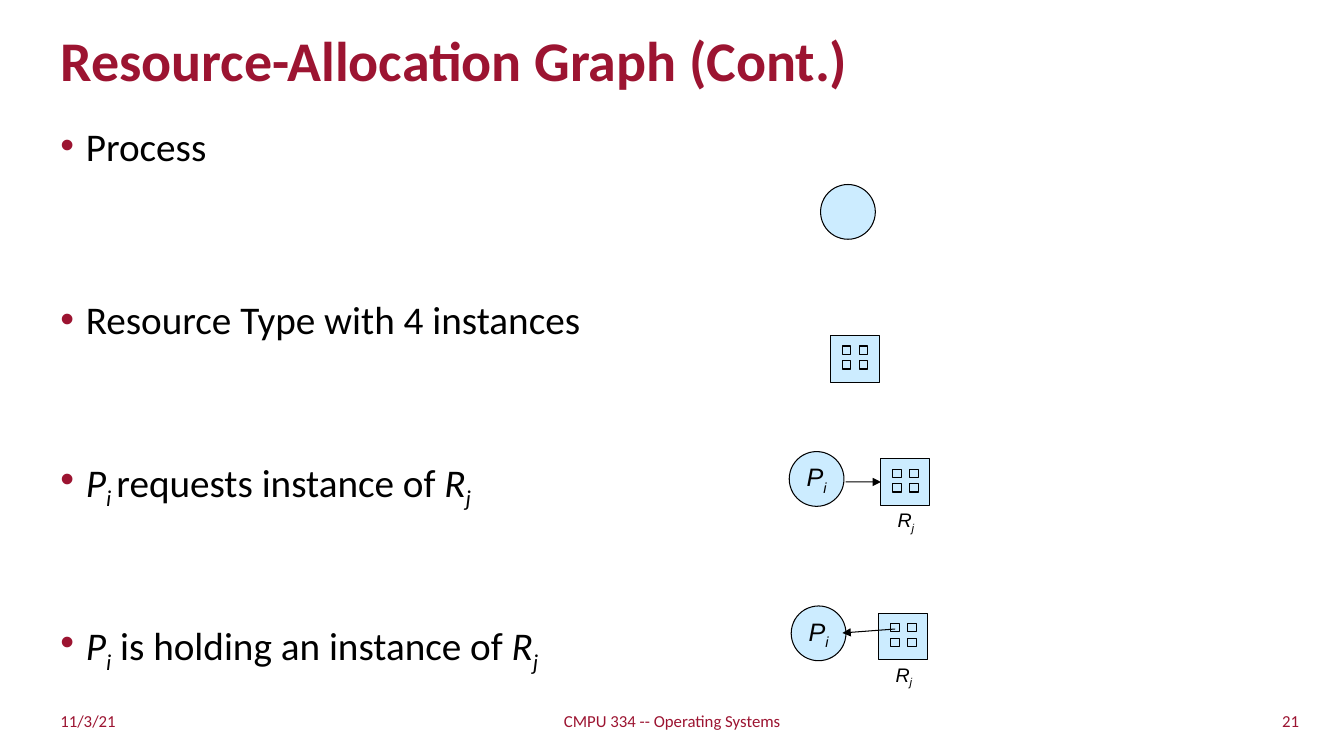
from dataclasses import dataclass

from lxml import etree
from pptx import Presentation
from pptx.dml.color import RGBColor
from pptx.enum import shapes, text
from pptx.oxml import ns
from pptx.util import Cm, Pt


@dataclass(frozen=True)
class Theme:
    accent: RGBColor = RGBColor(0x9C, 0x14, 0x31)
    ink: RGBColor = RGBColor(0, 0, 0)
    node: RGBColor = RGBColor(0xCC, 0xEC, 0xFF)
    heading_font: str = "Calibri"
    diagram_font: str = "Arial"
    title: Pt = Pt(40)
    body: Pt = Pt(28)
    process: Pt = Pt(18)
    resource: Pt = Pt(14)
    footer: Pt = Pt(12)
    outline: Pt = Pt(0.75)


THEME = Theme()
PLAIN, ITALIC, SUBSCRIPT = "plain", "italic", "subscript"
PROCESS_NAME = [("P", ITALIC), ("i", SUBSCRIPT)]
RESOURCE_NAME = [("R", ITALIC), ("j", SUBSCRIPT)]
BULLETS = [
    (0, [("Process", PLAIN)]),
    (97, [("Resource Type with 4 instances", PLAIN)]),
    (86, [("P", ITALIC), ("i ", SUBSCRIPT),
          ("requests instance of ", PLAIN), *RESOURCE_NAME]),
    (86, [*PROCESS_NAME, (" is holding an instance of ", PLAIN), *RESOURCE_NAME]),
]
PROCESS_SIZE = 1.38
RESOURCE_WIDTH, RESOURCE_HEIGHT = 1.23, 1.17
INSTANCE_SIZE = 0.21


def add_runs(paragraph, runs, size, font, color, bold=False):
    for words, style in runs:
        run = paragraph.add_run()
        run.text = words
        run.font.size = size
        run.font.name = font
        run.font.color.rgb = color
        run.font.bold = bold
        run.font.italic = style != PLAIN
        if style == SUBSCRIPT:
            run.font._element.set("baseline", "-25000")


def place(shape, left, top, width, height):
    shape.left, shape.top = Cm(left), Cm(top)
    shape.width, shape.height = Cm(width), Cm(height)


def fill_title(title, words):
    place(title, 1.27, 0.64, 29.08, 1.9)
    frame = title.text_frame
    frame.auto_size = text.MSO_AUTO_SIZE.NONE
    frame.vertical_anchor = text.MSO_ANCHOR.MIDDLE
    heading = frame.paragraphs[0]
    heading.alignment = text.PP_ALIGN.LEFT
    heading.line_spacing = 0.9
    add_runs(heading, [(words, PLAIN)], THEME.title, THEME.heading_font,
             THEME.accent, bold=True)


def add_bullet(paragraph):
    properties = paragraph._p.get_or_add_pPr()
    properties.set("marL", str(Cm(0.64)))
    properties.set("indent", str(Cm(-0.64)))
    color = etree.SubElement(properties, ns.qn("a:buClr"))
    etree.SubElement(color, ns.qn("a:srgbClr"), val=str(THEME.accent))
    etree.SubElement(properties, ns.qn("a:buFont"), typeface="Arial")
    etree.SubElement(properties, ns.qn("a:buChar"), char="•")


def fill_body(body, bullets):
    place(body, 1.27, 3.18, 31.32, 13.84)
    frame = body.text_frame
    frame.auto_size = text.MSO_AUTO_SIZE.NONE
    frame.vertical_anchor = text.MSO_ANCHOR.TOP
    for index, (space, runs) in enumerate(bullets):
        item = frame.add_paragraph() if index else frame.paragraphs[0]
        add_bullet(item)
        item.line_spacing = 0.8
        item.space_before = Pt(space)
        add_runs(item, runs, THEME.body, THEME.heading_font, THEME.ink)


def add_node(parent, preset, left, top, width, height):
    node = parent.add_shape(preset, Cm(left), Cm(top), Cm(width), Cm(height))
    node.shadow.inherit = False
    node.fill.solid()
    node.fill.fore_color.rgb = THEME.node
    node.line.color.rgb = THEME.ink
    node.line.width = THEME.outline
    return node


def add_name(frame, runs, size):
    frame.word_wrap = False
    frame.vertical_anchor = text.MSO_ANCHOR.MIDDLE
    name = frame.paragraphs[0]
    name.alignment = text.PP_ALIGN.CENTER
    add_runs(name, runs, size, THEME.diagram_font, THEME.ink)


def add_process(slide, left, top, name=()):
    process = add_node(slide.shapes, shapes.MSO_SHAPE.OVAL, left, top,
                       PROCESS_SIZE, PROCESS_SIZE)
    if name:
        add_name(process.text_frame, name, THEME.process)


def add_resource(slide, left, top, name=()):
    square = shapes.MSO_SHAPE.RECTANGLE
    group = slide.shapes.add_group_shape().shapes
    resource = add_node(group, square, left, top, RESOURCE_WIDTH, RESOURCE_HEIGHT)
    for row in range(2):
        for column in range(2):
            add_node(group, square, left + 0.3 + 0.43 * column,
                     top + 0.26 + 0.37 * row, INSTANCE_SIZE, INSTANCE_SIZE)
    if name:
        label = slide.shapes.add_textbox(Cm(left + 0.16), Cm(top + 1.15),
                                         Cm(0.94), Cm(0.86))
        label.text_frame.auto_size = text.MSO_AUTO_SIZE.SHAPE_TO_FIT_TEXT
        add_name(label.text_frame, name, THEME.resource)
    return resource


def add_arrow(slide, start, end):
    arrow = slide.shapes.add_connector(
        shapes.MSO_CONNECTOR.STRAIGHT, *(Cm(value) for value in (*start, *end)))
    arrow.line.color.rgb = THEME.ink
    arrow.line.width = THEME.outline
    etree.SubElement(arrow.line._get_or_add_ln(), ns.qn("a:tailEnd"), type="triangle")
    etree.SubElement(arrow._element.spPr, ns.qn("a:effectLst"))
    return arrow


def add_footer(slide, left, width, words, alignment):
    footer = slide.shapes.add_textbox(Cm(left), Cm(17.65), Cm(width), Cm(1.02))
    frame = footer.text_frame
    frame.word_wrap = True
    frame.vertical_anchor = text.MSO_ANCHOR.MIDDLE
    line = frame.paragraphs[0]
    line.alignment = alignment
    add_runs(line, [(words, PLAIN)], THEME.footer, THEME.heading_font, THEME.accent)


def main():
    deck = Presentation()
    deck.slide_width, deck.slide_height = Cm(33.87), Cm(19.05)
    slide = deck.slides.add_slide(deck.slide_layouts[1])
    fill_title(slide.shapes.title, "Resource-Allocation Graph (Cont.)")
    fill_body(slide.placeholders[1], BULLETS)

    add_process(slide, 20.68, 4.65)
    add_resource(slide, 20.93, 8.46)

    add_process(slide, 19.89, 11.38, PROCESS_NAME)
    requested = add_resource(slide, 22.2, 11.56, RESOURCE_NAME)
    request = add_arrow(slide, (21.31, 12.14), (22.2, 12.14))
    request.end_connect(requested, 1)

    add_process(slide, 19.94, 15.27, PROCESS_NAME)
    add_resource(slide, 22.15, 15.45, RESOURCE_NAME)
    add_arrow(slide, (22.56, 15.85), (21.23, 15.95))

    add_footer(slide, 1.27, 9.55, "11/3/21", text.PP_ALIGN.LEFT)
    add_footer(slide, 11.23, 11.43, "CMPU 334 -- Operating Systems",
               text.PP_ALIGN.CENTER)
    add_footer(slide, 23.44, 9.55, "21", text.PP_ALIGN.RIGHT)
    deck.save("out.pptx")


if __name__ == "__main__":
    main()
